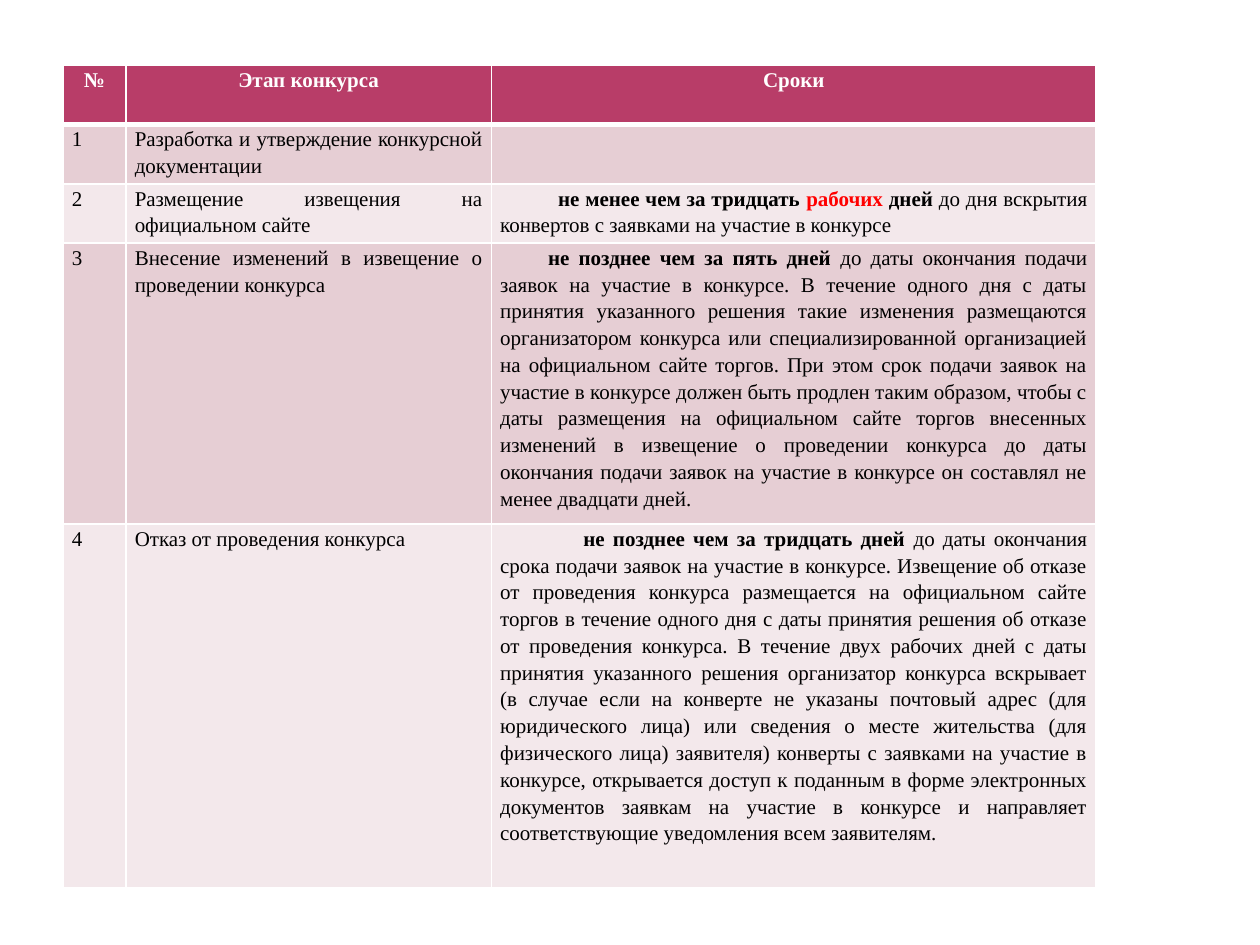
from lxml.etree import SubElement
from pptx import Presentation
from pptx.dml.color import RGBColor
from pptx.enum.text import PP_ALIGN
from pptx.oxml.ns import qn
from pptx.util import Inches, Pt

WHITE = RGBColor(0xFF, 0xFF, 0xFF)
BLACK = RGBColor(0x00, 0x00, 0x00)
RED = RGBColor(0xFF, 0x00, 0x00)
HEADER_FILL = RGBColor(0xB8, 0x3D, 0x68)
BAND_FILLS = (RGBColor(0xE6, 0xCE, 0xD4), RGBColor(0xF3, 0xE8, 0xEB))

GRID = Inches(0.1)
TABLE_LEFT, TABLE_TOP = 5, 5.2
COLUMN_WIDTHS = (5, 29, 48)
ROW_HEIGHTS = (4.7, 4.7, 4.7, 22.3, 28.9)

HEADINGS = ("№", "Этап конкурса", "Сроки")
STAGES = (
    ("Разработка и утверждение конкурсной документации", 0, ()),
    ("Размещение извещения на официальном сайте", 4.6, (
        ("не менее чем за тридцать ", True, BLACK),
        ("рабочих", True, RED),
        (" дней ", True, BLACK),
        ("до дня вскрытия конвертов с заявками на участие в конкурсе", False, BLACK),
    )),
    ("Внесение изменений в извещение о проведении конкурса", 3.8, (
        ("не позднее чем за пять дней ", True, BLACK),
        ("до даты окончания подачи заявок на участие в конкурсе. В течение одного дня "
         "с даты принятия указанного решения такие изменения размещаются организатором "
         "конкурса или специализированной организацией на официальном сайте торгов. "
         "При этом срок подачи заявок на участие в конкурсе должен быть продлен таким "
         "образом, чтобы с даты размещения на официальном сайте торгов внесенных "
         "изменений в извещение о проведении конкурса до даты окончания подачи заявок "
         "на участие в конкурсе он составлял не менее двадцати дней.", False, BLACK),
    )),
    ("Отказ от проведения конкурса", 6.6, (
        ("не позднее чем за тридцать дней ", True, BLACK),
        ("до даты окончания срока подачи заявок на участие в конкурсе. Извещение об "
         "отказе от проведения конкурса размещается на официальном сайте торгов в "
         "течение одного дня с даты принятия решения об отказе от проведения конкурса. "
         "В течение двух рабочих дней с даты принятия указанного решения организатор "
         "конкурса вскрывает (в случае если на конверте не указаны почтовый адрес (для "
         "юридического лица) или сведения о месте жительства (для физического лица) "
         "заявителя) конверты с заявками на участие в конкурсе, открывается доступ к "
         "поданным в форме электронных документов заявкам на участие в конкурсе и "
         "направляет соответствующие уведомления всем заявителям.", False, BLACK),
    )),
)


class StageSlide:
    """Holds the text style and the slide, with lengths in grid units."""

    font_name = "Times New Roman"
    font_size = Pt(12)
    line_spacing = 1.15

    def __init__(self, presentation):
        self.slide = presentation.slides.add_slide(presentation.slide_layouts[6])

    def add_table(self, left, top, widths, heights):
        box = [int(units * GRID) for units in (left, top, sum(widths), sum(heights))]
        table = self.slide.shapes.add_table(len(heights), len(widths), *box).table
        for column, width in zip(table.columns, widths):
            column.width = int(width * GRID)
        for row, height in zip(table.rows, heights):
            row.height = int(height * GRID)
        return table

    def add_border(self, cell, side, width):
        line = SubElement(cell._tc.get_or_add_tcPr(), qn(f"a:ln{side}"), w=str(Pt(width)))
        fill = SubElement(line, qn("a:solidFill"))
        SubElement(fill, qn("a:srgbClr"), val=str(WHITE))

    def format_cell(self, cell, fill, top=1, bottom=1):
        for side, width in zip("LRTB", (1, 1, top, bottom)):
            self.add_border(cell, side, width)
        cell.fill.solid()
        cell.fill.fore_color.rgb = fill
        cell.margin_left = cell.margin_right = Inches(0.07)
        cell.margin_top = cell.margin_bottom = 0

    def add_text(self, cell, text, color=BLACK, bold=False, alignment=PP_ALIGN.JUSTIFY):
        paragraph = self.format_paragraph(cell, alignment)
        paragraph.add_run().text = text
        paragraph.font.bold = bold
        paragraph.font.color.rgb = color

    def add_runs(self, cell, runs, indent):
        paragraph = self.format_paragraph(cell, PP_ALIGN.JUSTIFY)
        paragraph._p.get_or_add_pPr().set("indent", str(int(indent * GRID)))
        for text, bold, color in runs:
            run = paragraph.add_run()
            run.text = text
            run.font.bold = bold
            run.font.color.rgb = color

    def format_paragraph(self, cell, alignment):
        paragraph = cell.text_frame.paragraphs[0]
        paragraph.alignment = alignment
        paragraph.line_spacing = self.line_spacing
        paragraph.font.name = self.font_name
        paragraph.font.size = self.font_size
        return paragraph


def main():
    presentation = Presentation()
    presentation.slide_width, presentation.slide_height = Inches(10), Inches(7.5)
    page = StageSlide(presentation)
    table = page.add_table(TABLE_LEFT, TABLE_TOP, COLUMN_WIDTHS, ROW_HEIGHTS)

    for column, heading in enumerate(HEADINGS):
        cell = table.cell(0, column)
        page.format_cell(cell, HEADER_FILL, bottom=3)
        page.add_text(cell, heading, WHITE, True, PP_ALIGN.CENTER)

    for number, (stage, indent, term) in enumerate(STAGES, start=1):
        number_cell, stage_cell, term_cell = table.rows[number].cells
        for cell in (number_cell, stage_cell, term_cell):
            page.format_cell(cell, BAND_FILLS[(number - 1) % 2], top=3 if number == 1 else 1)
        page.add_text(number_cell, str(number))
        page.add_text(stage_cell, stage)
        page.add_runs(term_cell, term, indent)

    presentation.save("out.pptx")


if __name__ == "__main__":
    main()
